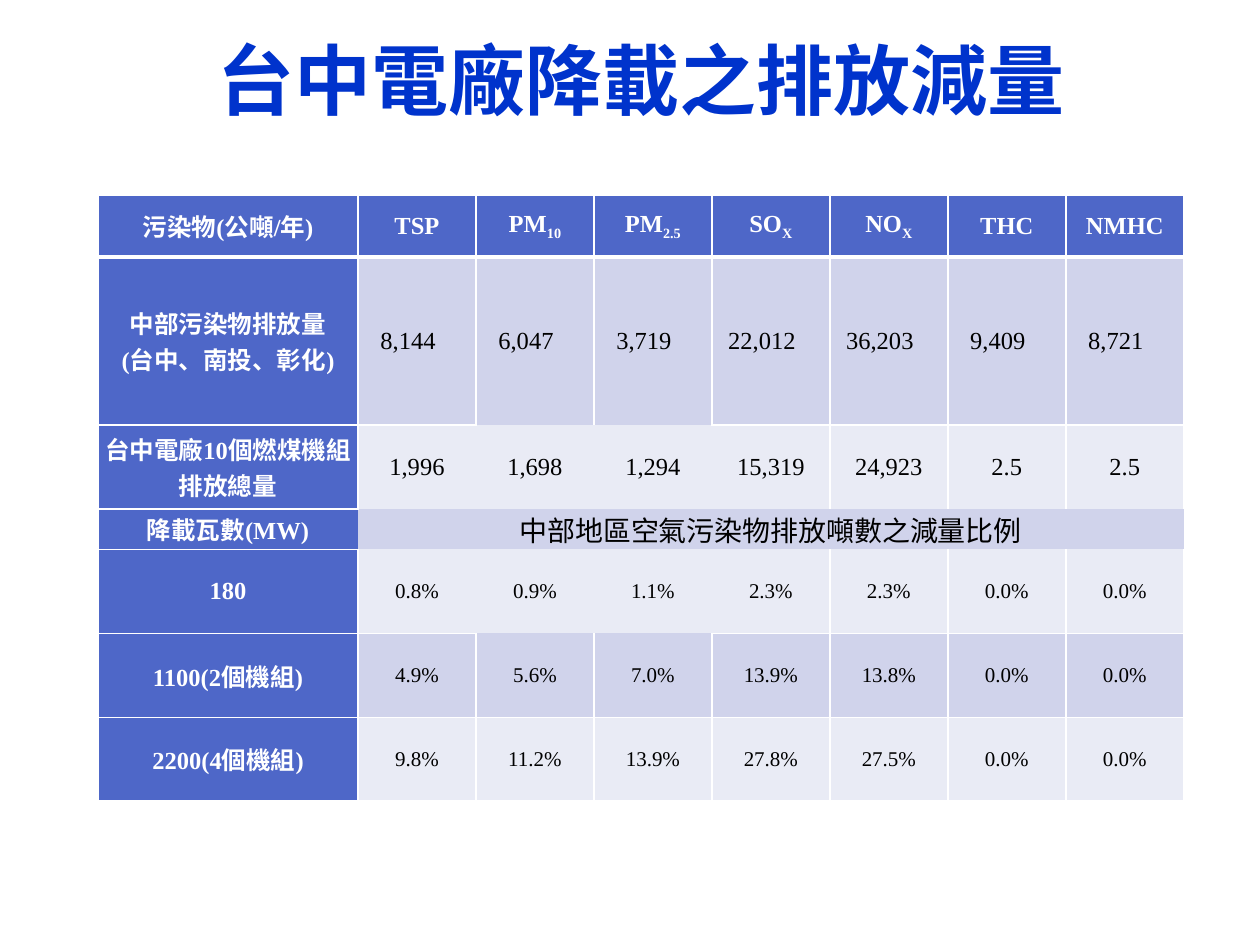
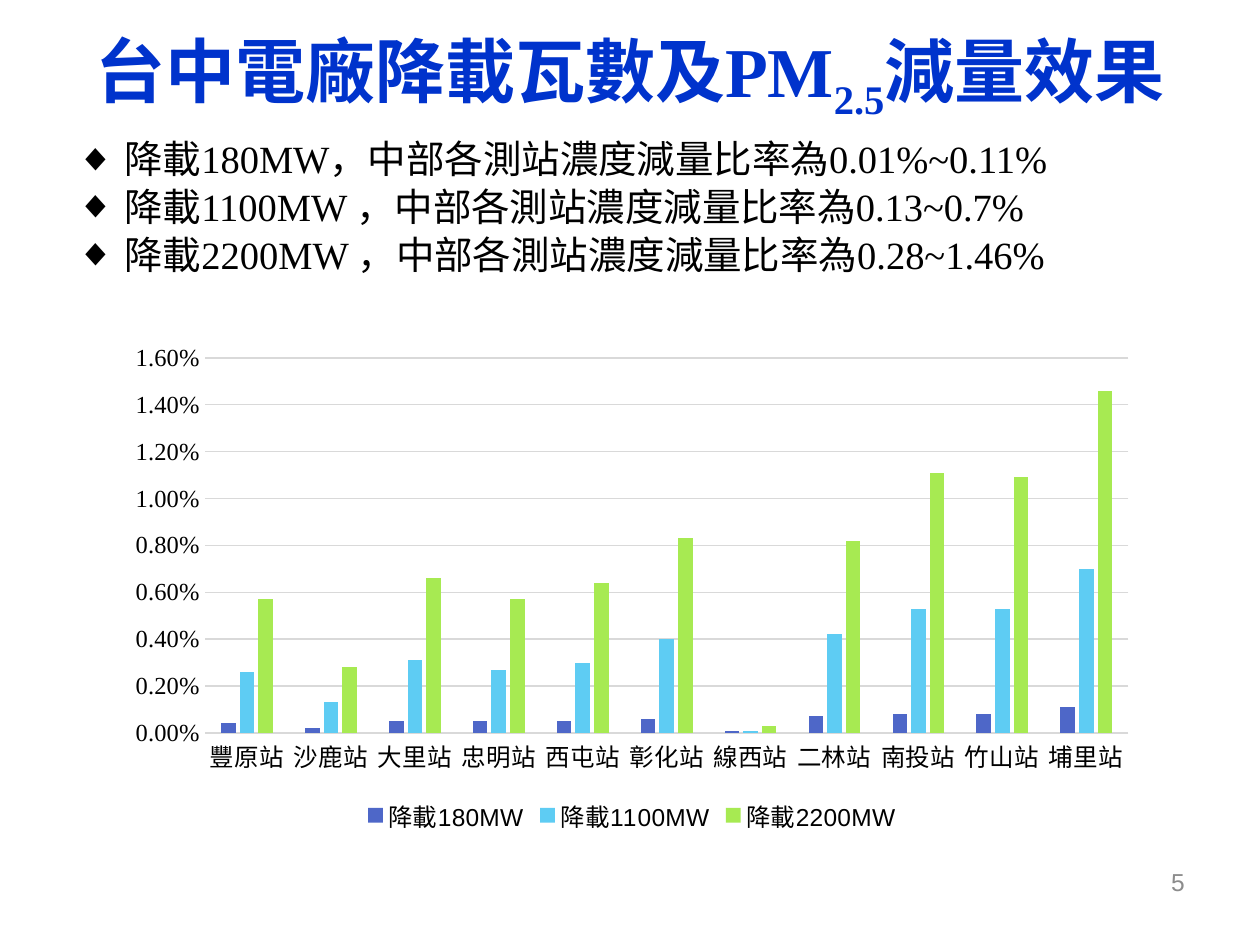
from lxml import etree
from pptx import Presentation
from pptx import util as u
from pptx.chart.data import CategoryChartData
from pptx.dml.color import RGBColor
from pptx.enum import chart as ch, text as t
from pptx.oxml.ns import qn

SCALE = 914400 / 126
HUE = {"title": "0033CC", "head": "4E67C8", "odd": "D0D3EB", "even": "E9EBF5",
       "white": "FFFFFF", "black": "000000", "gray": "8C8C8C", "grid": "D9D9D9",
       "sky": "5ECCF3", "lime": "A7EA52"}
SERIF, SANS, HAN = "Times New Roman", "Arial", "Noto Sans CJK SC"
MID, LEFT, RIGHT = t.PP_ALIGN.CENTER, t.PP_ALIGN.LEFT, t.PP_ALIGN.RIGHT

HEADS = ["污染物(公噸/年)", "TSP", "PM|10", "PM|2.5", "SO|X", "NO|X", "THC", "NMHC"]
ROWS = [
    HEADS,
    ["中部污染物排放量\n(台中、南投、彰化)", "8,144", "6,047", "3,719", "22,012", "36,203", "9,409", "8,721"],
    ["台中電廠10個燃煤機組排放總量", "1,996", "1,698", "1,294", "15,319", "24,923", "2.5", "2.5"],
    ["降載瓦數(MW)", "中部地區空氣污染物排放噸數之減量比例"],
    ["180", "0.8%", "0.9%", "1.1%", "2.3%", "2.3%", "0.0%", "0.0%"],
    ["1100(2個機組)", "4.9%", "5.6%", "7.0%", "13.9%", "13.8%", "0.0%", "0.0%"],
    ["2200(4個機組)", "9.8%", "11.2%", "13.9%", "27.8%", "27.5%", "0.0%", "0.0%"],
]
TALL = [62, 168, 84, 40, 84, 84, 84]
WIDE = [260] + [118] * 7
SPAN = 3

NOTES = ["降載180MW，中部各測站濃度減量比率為0.01%~0.11%",
         "降載1100MW ，中部各測站濃度減量比率為0.13~0.7%",
         "降載2200MW ，中部各測站濃度減量比率為0.28~1.46%"]
SITES = ["豐原站", "沙鹿站", "大里站", "忠明站", "西屯站", "彰化站",
         "線西站", "二林站", "南投站", "竹山站", "埔里站"]
LOADS = [
    ("降載180MW", "head", [0.0004, 0.0002, 0.0005, 0.0005, 0.0005, 0.0006,
                          0.0001, 0.0007, 0.0008, 0.0008, 0.0011]),
    ("降載1100MW", "sky", [0.0026, 0.0013, 0.0031, 0.0027, 0.003, 0.004,
                          0.0001, 0.0042, 0.0053, 0.0053, 0.007]),
    ("降載2200MW", "lime", [0.0057, 0.0028, 0.0066, 0.0057, 0.0064, 0.0083,
                           0.0003, 0.0082, 0.0111, 0.0109, 0.0146]),
]


def px(n):
    return u.Emu(round(n * SCALE))


def rgb(hue):
    return RGBColor.from_string(HUE[hue])


def place(shape, box):
    shape.left, shape.top, shape.width, shape.height = map(px, box)


def style(font, size, hue, face, bold=False):
    font.size, font.name, font.bold = u.Pt(size), face, bold
    font.color.rgb = rgb(hue)


def write(para, words, size, hue, face=SERIF, bold=False, align=MID):
    para.alignment = align
    for i, part in enumerate(words.split("|")):
        run = para.add_run()
        run.text = part
        style(run.font, size, hue, face, bold)
        props = run._r.get_or_add_rPr()
        props.find(qn("a:latin")).addnext(props.makeelement(qn("a:ea"), {"typeface": HAN}))
        if i % 2:
            props.set("baseline", "-25000")


def title(slide, box, words, size, face):
    shape = slide.shapes.title
    place(shape, box)
    frame = shape.text_frame
    frame.auto_size = t.MSO_AUTO_SIZE.NONE
    frame.vertical_anchor = t.MSO_ANCHOR.MIDDLE
    write(frame.paragraphs[0], words, size, "title", face, True)


def bare(row, col):
    if col == 0:
        return "R" if row == SPAN else ""
    cut = {2: "B", 3: "LRTB", 4: "T"}.get(row, "")
    if col in (2, 3):
        cut += {1: "B", 2: "LRT", 4: "LRB", 5: "T"}.get(row, "")
    if row in (2, 4):
        cut += {1: "R", 4: "L"}.get(col, "")
    return cut


def border(cell, row, col):
    props = cell._tc.get_or_add_tcPr()
    cut = bare(row, col)
    for at, side in enumerate("LRTB"):
        thick = 3 if (row, side) in ((0, "B"), (1, "T")) else 1
        line = etree.Element(qn("a:ln" + side), w=str(u.Pt(thick)))
        if side in cut:
            etree.SubElement(line, qn("a:noFill"))
        else:
            fill = etree.SubElement(line, qn("a:solidFill"))
            etree.SubElement(fill, qn("a:srgbClr"), val=HUE["white"])
        props.insert(at, line)


def fill_cell(cell, row, col, words):
    head = row == 0 or col == 0
    cell.fill.solid()
    cell.fill.fore_color.rgb = rgb("head" if head else "odd" if row % 2 else "even")
    border(cell, row, col)
    cell.vertical_anchor = t.MSO_ANCHOR.MIDDLE
    cell.margin_left = cell.margin_right = px(2)
    cell.margin_top = cell.margin_bottom = 0
    if row == 1 and col:
        cell.margin_right = px(20)
    size, face = 14, SERIF
    if not head and row == SPAN:
        size, face = 16, HAN
    elif not head and row > SPAN:
        size = 12
    frame = cell.text_frame
    for i, line in enumerate(words.split("\n")):
        para = frame.add_paragraph() if i else frame.paragraphs[0]
        if line:
            write(para, line, size, "white" if head else "black", face, head)


def grid(slide, x, y):
    frame = slide.shapes.add_table(len(TALL), len(WIDE), px(x), px(y),
                                   px(sum(WIDE)), px(sum(TALL)))
    table = frame.table
    for row, tall in zip(table.rows, TALL):
        row.height = px(tall)
    for col, wide in zip(table.columns, WIDE):
        col.width = px(wide)
    table.cell(SPAN, 1).merge(table.cell(SPAN, len(WIDE) - 1))
    for r, row in enumerate(ROWS):
        for c in range(len(WIDE)):
            fill_cell(table.cell(r, c), r, c, row[c] if c < len(row) else "")


def bullets(slide, box):
    body = slide.placeholders[1]
    place(body, box)
    frame = body.text_frame
    frame.auto_size = t.MSO_AUTO_SIZE.NONE
    for i, words in enumerate(NOTES):
        para = frame.add_paragraph() if i else frame.paragraphs[0]
        props = para._p.get_or_add_pPr()
        props.set("marL", str(px(48)))
        props.set("indent", str(px(-48)))
        etree.SubElement(props, qn("a:buChar"), char="◆")
        para.line_spacing = 0.88
        para.space_before = u.Pt(4 if i else 0)
        write(para, words, 22, "black", align=LEFT)


def number(slide, box, words):
    shape = slide.shapes.add_textbox(*map(px, box))
    shape.text_frame.word_wrap = True
    write(shape.text_frame.paragraphs[0], words, 14, "gray", SANS, align=RIGHT)


def bars(slide, box):
    data = CategoryChartData(number_format="0.00%")
    data.categories = SITES
    for name, _, vals in LOADS:
        data.add_series(name, vals)
    chart = slide.shapes.add_chart(ch.XL_CHART_TYPE.COLUMN_CLUSTERED,
                                   *map(px, box), data).chart
    style(chart.font, 14, "black", SANS)
    chart.has_title = False
    chart.has_legend = True
    chart.legend.position = ch.XL_LEGEND_POSITION.BOTTOM
    chart.legend.include_in_layout = False
    style(chart.legend.font, 14, "black", SANS)
    plot = chart.plots[0]
    plot.gap_width, plot.overlap, plot.vary_by_categories = 219, -27, False
    for series, (_, hue, _) in zip(plot.series, LOADS):
        series.format.fill.solid()
        series.format.fill.fore_color.rgb = rgb(hue)
    cat, val = chart.category_axis, chart.value_axis
    for axis, face in ((cat, SANS), (val, SERIF)):
        axis.major_tick_mark = axis.minor_tick_mark = ch.XL_TICK_MARK.NONE
        style(axis.tick_labels.font, 14, "black", face)
    val.minimum_scale, val.maximum_scale, val.major_unit = 0, 0.016, 0.002
    val.tick_labels.number_format = "0.00%"
    val.tick_labels.number_format_is_linked = False
    val.has_major_gridlines = True
    val.format.line.fill.background()
    for line in (cat.format.line, val.major_gridlines.format.line):
        line.color.rgb, line.width = rgb("grid"), u.Pt(0.75)


def table_page(deck):
    slide = deck.slides.add_slide(deck.slide_layouts[5])
    title(slide, (74, 0, 1134, 158), "台中電廠降載之排放減量", 44, HAN)
    grid(slide, 98, 195)


def chart_page(deck):
    slide = deck.slides.add_slide(deck.slide_layouts[1])
    title(slide, (63, -4, 1134, 158), "台中電廠降載瓦數及PM|2.5|減量效果", 40, SERIF)
    bullets(slide, (64, 135, 1134, 179))
    number(slide, (903, 861, 294, 66), "5")
    bars(slide, (115, 334, 1034, 504))


def main():
    deck = Presentation()
    deck.slide_width, deck.slide_height = px(1260), px(945)
    table_page(deck)
    chart_page(deck)
    deck.save("out.pptx")


if __name__ == "__main__":
    main()
